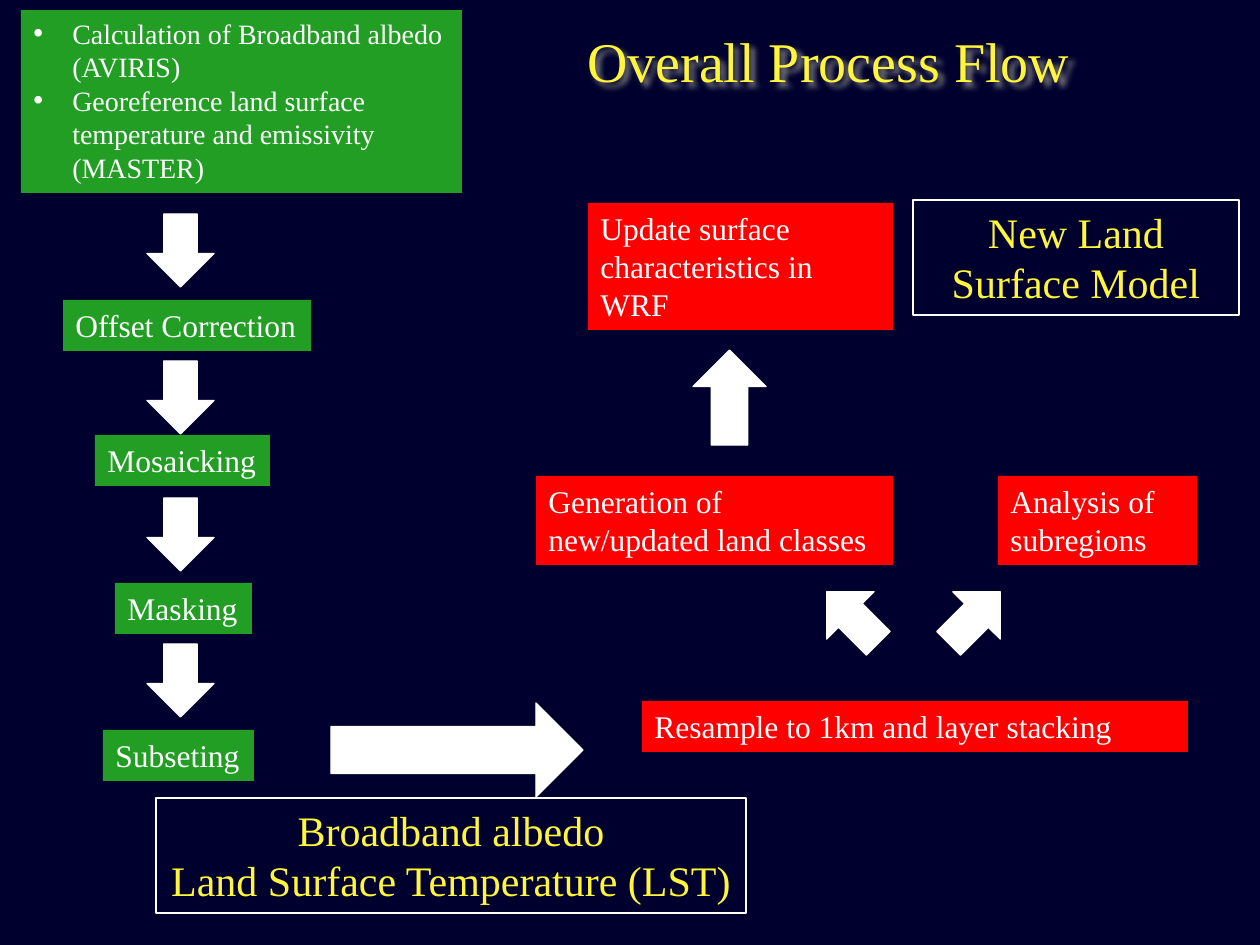
from lxml import etree
from pptx import Presentation
from pptx.dml.color import RGBColor
from pptx.enum.shapes import MSO_SHAPE
from pptx.enum.text import MSO_ANCHOR, PP_ALIGN
from pptx.oxml import parse_xml
from pptx.oxml.ns import nsdecls, qn
from pptx.util import Pt

EMU_PER_PX = 914400 / 126
NAVY = RGBColor(0x00, 0x00, 0x2E)
GREEN = RGBColor(0x22, 0x9E, 0x25)
RED = RGBColor(0xFF, 0x00, 0x00)
WHITE = RGBColor(0xFF, 0xFF, 0xFF)
YELLOW = RGBColor(0xFF, 0xF5, 0x3B)
RECTANGLE = MSO_SHAPE.RECTANGLE
DOWN_ARROW = MSO_SHAPE.DOWN_ARROW
LEFT, CENTER = PP_ALIGN.LEFT, PP_ALIGN.CENTER
TOP, MIDDLE = MSO_ANCHOR.TOP, MSO_ANCHOR.MIDDLE


def px(length):
    return round(length * EMU_PER_PX)


class FlowSlide:
    font = "Times New Roman"
    line_width = Pt(0.75)

    def __init__(self, slide):
        self.slide = slide
        background = slide.background.fill
        background.solid()
        background.fore_color.rgb = NAVY

    def add_text(self, frame, paragraphs, size, color, align=LEFT, anchor=TOP, wrap=True):
        frame.word_wrap = wrap
        frame.vertical_anchor = anchor
        for index, text in enumerate(paragraphs):
            paragraph = frame.add_paragraph() if index else frame.paragraphs[0]
            paragraph.alignment = align
            run = paragraph.add_run()
            run.text = text
            run.font.name = self.font
            run.font.size = Pt(size)
            run.font.color.rgb = color

    def shape(self, kind, box, fill=None, line=None):
        shape = self.slide.shapes.add_shape(kind, *map(px, box))
        shape.shadow.inherit = False
        if fill is None:
            shape.fill.background()
        else:
            shape.fill.solid()
            shape.fill.fore_color.rgb = fill
        if line is None:
            shape.line.fill.background()
        else:
            shape.line.color.rgb = line
            shape.line.width = self.line_width
        return shape

    def step(self, box, text, fill, wrap=True):
        frame = self.shape(RECTANGLE, box, fill).text_frame
        self.add_text(frame, [text], 18, WHITE, wrap=wrap)

    def bulleted_step(self, box, items, fill):
        frame = self.shape(RECTANGLE, box, fill).text_frame
        self.add_text(frame, items, 16, WHITE)
        for paragraph in frame.paragraphs:
            properties = paragraph._p.get_or_add_pPr()
            properties.set("marL", str(px(39)))
            properties.set("indent", str(-px(39)))
            etree.SubElement(properties, qn("a:buFont"), typeface="Arial")
            etree.SubElement(properties, qn("a:buChar"), char="•")

    def caption(self, box, lines, wrap=True):
        frame = self.shape(RECTANGLE, box, line=WHITE).text_frame
        self.add_text(frame, lines, 24, YELLOW, CENTER, wrap=wrap)

    def arrow(self, box, rotation=0):
        self.shape(DOWN_ARROW, box, WHITE, WHITE).rotation = rotation

    def title(self, box, text):
        """Add the heading with a soft grey shadow behind its letters."""
        heading = self.slide.shapes.add_textbox(*map(px, box))
        self.add_text(heading.text_frame, [text], 32, YELLOW, CENTER, MIDDLE)
        heading._element.spPr.append(parse_xml(
            f'<a:effectLst {nsdecls("a")}>'
            '<a:outerShdw blurRad="38100" dist="38100" dir="2700000" algn="tl">'
            '<a:srgbClr val="808080"/></a:outerShdw></a:effectLst>'))


def main():
    presentation = Presentation()
    presentation.slide_width, presentation.slide_height = px(1260), px(945)
    flow = FlowSlide(presentation.slides.add_slide(presentation.slide_layouts[6]))

    flow.bulleted_step((21, 10, 441, 183), [
        "Calculation of Broadband albedo (AVIRIS)",
        "Georeference land surface temperature and emissivity (MASTER)",
    ], GREEN)
    for left, top, width, text in [
        (63, 300, 248, "Offset Correction"),
        (95, 435, 175, "Mosaicking"),
        (115, 583, 137, "Masking"),
        (103, 730, 151, "Subseting"),
    ]:
        flow.step((left, top, width, 51), text, GREEN, wrap=False)

    for box, text in [
        ((642, 701, 546, 51), "Resample to 1km and layer stacking"),
        ((998, 476, 199, 89), "Analysis of subregions"),
        ((536, 476, 357, 89), "Generation of new/updated land classes"),
        ((588, 203, 305, 127), "Update surface characteristics in WRF"),
    ]:
        flow.step(box, text, RED)

    for top in (214, 361, 498, 644):
        flow.arrow((147, top, 67, 73))
    flow.arrow((410, 624, 94, 252), rotation=270)
    flow.arrow((693, 350, 73, 95), rotation=180)
    flow.arrow((941, 581, 67, 73), rotation=225)
    flow.arrow((819, 581, 67, 73), rotation=135)

    flow.title((214, -19, 1229, 158), "Overall Process Flow")
    flow.caption((156, 798, 590, 115),
                 ["Broadband albedo", "Land Surface Temperature (LST)"], wrap=False)
    flow.caption((913, 200, 326, 115), ["New Land Surface Model"])

    presentation.save("out.pptx")


if __name__ == "__main__":
    main()
